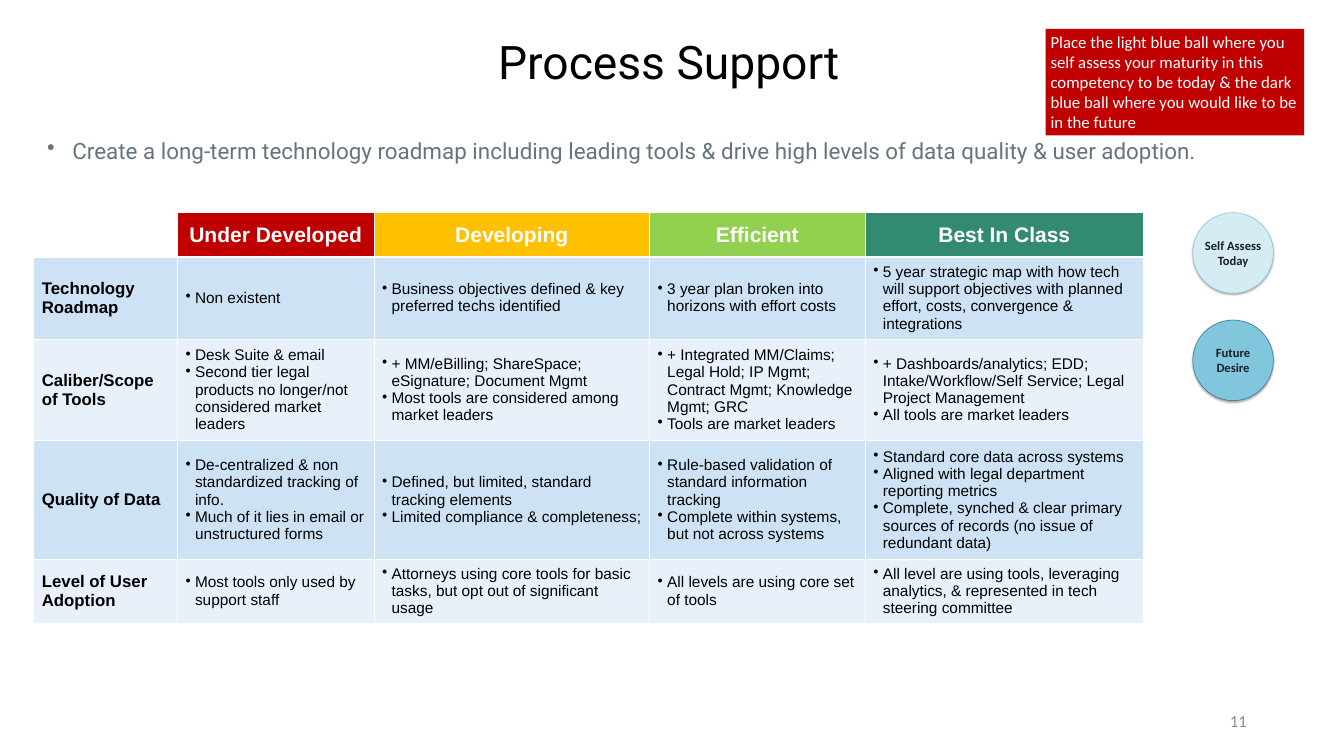
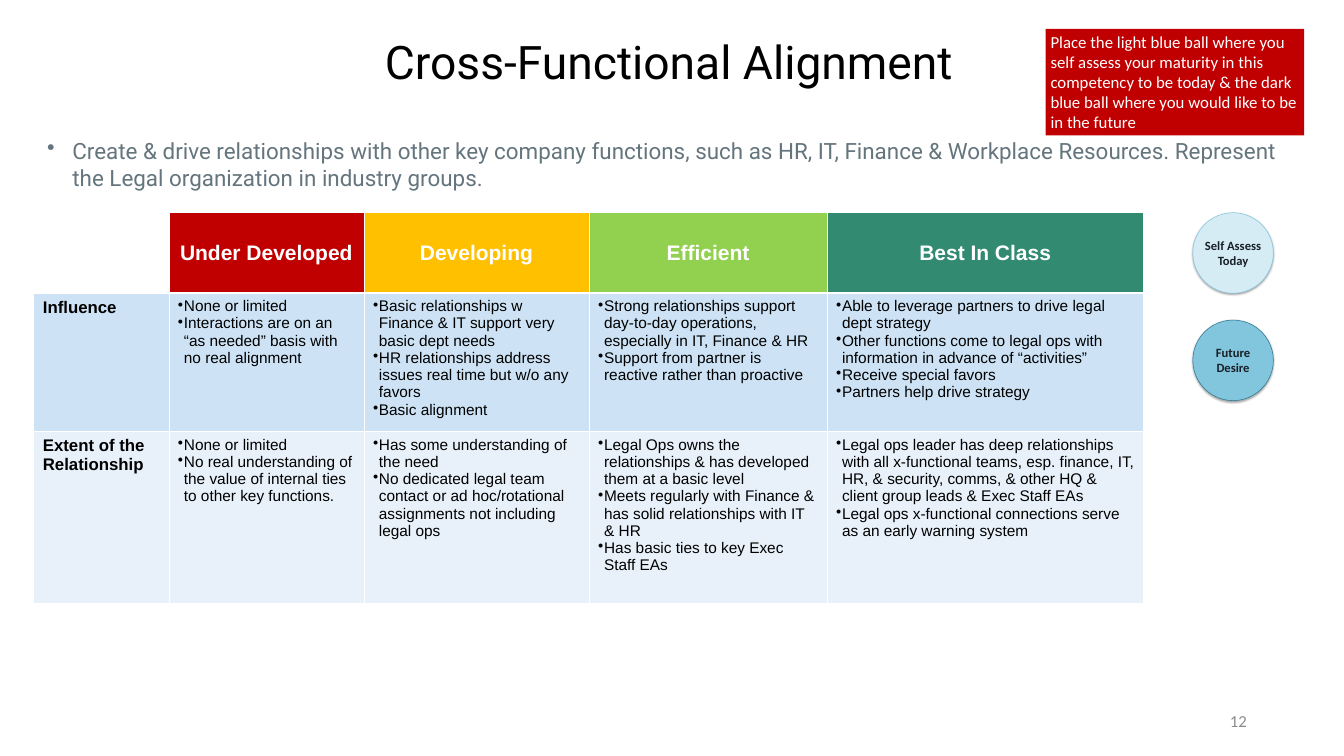
from collections import namedtuple

from lxml import etree
from pptx import Presentation
from pptx import util as u
from pptx.dml.color import RGBColor
from pptx.enum import shapes, text
from pptx.oxml.ns import qn

Cm, Pt = u.Cm, u.Pt
Box = namedtuple("Box", "left top width height")
Grid = namedtuple("Grid", "columns rows inset indent anchor")

COLOURS = {
    "white": "FFFFFF", "black": "000000", "number": "8C8C8C", "lead": "65757D",
    "red": "C00000", "amber": "FFC000", "lime": "92D050", "green": "328B71",
    "band_dark": "CDE3F5", "band_light": "E8F1FA", "ball_text": "181F26",
    "light_ball": "D5ECF4", "dark_ball": "82C6DE", "dark_ball_line": "277692",
}
ALIGN, ANCHOR = text.PP_ALIGN, text.MSO_ANCHOR

NUMBER_BOX = Box(47.85, 35.31, 15.24, 2.03)
TITLE_BOX = Box(1.7, 1.88, 64.03, 2.36)
HINT_BOX = Box(52.7, 1.45, 13.03, 5.38)
LEAD_BOX = Box(2.13, 6.78, 63.6, 1.63)
BALLS_BOX = Box(60.12, 10.72, 4.06, 9.47)
TABLE_BOX = Box(1.7, 10.72, 55.93, 20.67)

HINT = ("Place the light blue ball where you self assess your maturity in this "
        "competency to be today & the dark blue ball where you would like to be "
        "in the future")
LEVELS = [("Under Developed", "red"), ("Developing", "amber"),
          ("Efficient", "lime"), ("Best In Class", "green")]
BALLS = [("Self Assess Today", "light_ball", "dark_ball"),
         ("Future Desire", "dark_ball", "dark_ball_line")]

PROCESS_GRID = Grid([7.24, 9.91, 13.89, 10.87, 14.02], [2.22, 4.16, 5.09, 6, 3.2],
                    (0.41, 0.2), 0.48, ANCHOR.MIDDLE)
PROCESS_ROWS = [
    ("Technology Roadmap", [
        ["Non existent"],
        ["Business objectives defined & key preferred techs identified"],
        ["3 year plan broken into horizons with effort costs"],
        ["5 year strategic map with how tech will support objectives with planned "
         "effort, costs, convergence & integrations"]]),
    ("Caliber/Scope of Tools", [
        ["Desk Suite & email",
         "Second tier legal products no longer/not considered market leaders"],
        ["+ MM/eBilling; ShareSpace; eSignature; Document Mgmt",
         "Most tools are considered among market leaders"],
        ["+ Integrated MM/Claims; Legal Hold; IP Mgmt; Contract Mgmt; Knowledge "
         "Mgmt; GRC",
         "Tools are market leaders"],
        ["+ Dashboards/analytics; EDD; Intake/Workflow/Self Service; Legal Project "
         "Management",
         "All tools are market leaders"]]),
    ("Quality of Data", [
        ["De-centralized & non standardized tracking of info.",
         "Much of it lies in email or unstructured forms"],
        ["Defined, but limited, standard tracking elements",
         "Limited compliance & completeness;"],
        ["Rule-based validation of standard information tracking",
         "Complete within systems, but not across systems"],
        ["Standard core data across systems",
         "Aligned with legal department reporting metrics",
         "Complete, synched & clear primary sources of records (no issue of "
         "redundant data)"]]),
    ("Level of User Adoption", [
        ["Most tools only used by support staff"],
        ["Attorneys using core tools for basic tasks, but opt out of significant usage"],
        ["All levels are using core set of tools"],
        ["All level are using tools, leveraging analytics, & represented in tech "
         "steering committee"]]),
]

ALIGNMENT_GRID = Grid([6.81, 9.83, 11.35, 11.99, 15.95], [4.06, 6.95, 8.66],
                      (0.46, 0.23), 0.3, ANCHOR.TOP)
ALIGNMENT_ROWS = [
    ("Influence", [
        ["None or limited",
         "Interactions are on an “as needed” basis with no real alignment"],
        ["Basic relationships w Finance & IT support very basic dept needs",
         "HR relationships address issues real time but w/o any favors",
         "Basic alignment"],
        ["Strong relationships support day-to-day operations, especially in IT, "
         "Finance & HR",
         "Support from partner is reactive rather than proactive"],
        ["Able to leverage partners to drive legal dept strategy",
         "Other functions come to legal ops with information in advance of “activities”",
         "Receive special favors",
         "Partners help drive strategy"]]),
    ("Extent of the Relationship", [
        ["None or limited",
         "No real understanding of the value of internal ties to other key functions."],
        ["Has some understanding of the need",
         "No dedicated legal team contact or ad hoc/rotational assignments not "
         "including legal ops"],
        ["Legal Ops owns the relationships & has developed them at a basic level",
         "Meets regularly with Finance & has solid relationships with IT & HR",
         "Has basic ties to key Exec Staff EAs"],
        ["Legal ops leader has deep relationships with all x-functional teams, esp. "
         "finance, IT, HR, & security, comms, & other HQ & client group leads & "
         "Exec Staff EAs",
         "Legal ops x-functional connections serve as an early warning system"]]),
]


def colour(name):
    return RGBColor.from_string(COLOURS[name])


def lengths(box):
    return [Cm(value) for value in box]


def set_fill(target, name):
    target.fill.solid()
    target.fill.fore_color.rgb = colour(name)


def set_insets(target, across, down):
    """Set the margins of a text frame or a table cell."""
    target.margin_left = target.margin_right = Cm(across)
    target.margin_top = target.margin_bottom = Cm(down)


def write(frame, lines, font, size, ink, bold=False, align=ALIGN.LEFT, indent=0):
    """Write one paragraph per line, with hanging bullets if an indent is given."""
    for index, line in enumerate(lines):
        para = frame.paragraphs[0] if index == 0 else frame.add_paragraph()
        para.alignment = align
        if indent:
            properties = para._p.get_or_add_pPr()
            properties.set("marL", str(Cm(indent)))
            properties.set("indent", str(-Cm(indent)))
            etree.SubElement(properties, qn("a:buChar"), char="•")
        span = para.add_run()
        span.text = line
        span.font.name = font
        span.font.size = Pt(size)
        span.font.bold = bold
        span.font.color.rgb = colour(ink)


def add_text(page, box, line, font, size, ink, anchor=ANCHOR.TOP,
             insets=(0.25, 0.13), **style):
    frame = page.shapes.add_textbox(*lengths(box)).text_frame
    frame.word_wrap = True
    frame.vertical_anchor = anchor
    set_insets(frame, *insets)
    write(frame, [line], font, size, ink, **style)


def add_filled_shape(page, kind, box, fill):
    shape = page.shapes.add_shape(kind, *lengths(box))
    shape.shadow.inherit = False
    set_fill(shape, fill)
    shape.line.fill.background()
    shape.text_frame.word_wrap = True
    return shape


def add_hint(page, box):
    shape = add_filled_shape(page, shapes.MSO_SHAPE.RECTANGLE, box, "red")
    shape.text_frame.vertical_anchor = ANCHOR.TOP
    write(shape.text_frame, [HINT], "Calibri", 24, "white")


def add_soft_shadow(shape):
    effects = shape._element.spPr.find(qn("a:effectLst"))
    shadow = etree.SubElement(effects, qn("a:outerShdw"), blurRad=str(Pt(3.1)),
                              dist=str(Pt(1.8)), dir="5400000", rotWithShape="0")
    tint = etree.SubElement(shadow, qn("a:srgbClr"), val=COLOURS["black"])
    etree.SubElement(tint, qn("a:alpha"), val="35000")


def add_balls(page, box):
    """Place balls as wide as the box, the last one ending at its foot."""
    step = (box.height - box.width) / (len(BALLS) - 1)
    for index, (label, fill, line) in enumerate(BALLS):
        place = Box(box.left, box.top + index * step, box.width, box.width)
        ball = add_filled_shape(page, shapes.MSO_SHAPE.OVAL, place, fill)
        ball.line.color.rgb = colour(line)
        ball.line.width = Pt(0.75)
        add_soft_shadow(ball)
        ball.text_frame.vertical_anchor = ANCHOR.MIDDLE
        set_insets(ball.text_frame, 0, 0)
        write(ball.text_frame, [label], "Calibri", 18, "ball_text", True, ALIGN.CENTER)


def set_borders(cell, **widths):
    """Draw white borders of 1 point, or of the width given for a side."""
    properties = cell._tc.get_or_add_tcPr()
    for index, side in enumerate("LRTB"):
        line = etree.Element(qn("a:ln" + side), w=str(Pt(widths.get(side, 1))))
        fill = etree.SubElement(line, qn("a:solidFill"))
        etree.SubElement(fill, qn("a:srgbClr"), val=COLOURS["white"])
        properties.insert(index, line)


def style_cell(cell, fill, anchor, grid, **widths):
    set_fill(cell, fill)
    set_borders(cell, **widths)
    set_insets(cell, *grid.inset)
    cell.vertical_anchor = anchor


def add_maturity_table(page, box, grid, rows):
    table = page.shapes.add_table(len(grid.rows), len(grid.columns), *lengths(box)).table
    table.first_row = table.horz_banding = False
    for column, width in zip(table.columns, grid.columns):
        column.width = Cm(width)
    for row, height in zip(table.rows, grid.rows):
        row.height = Cm(height)

    style_cell(table.cell(0, 0), "white", ANCHOR.MIDDLE, grid, B=3)
    for across, (level, fill) in enumerate(LEVELS, 1):
        cell = table.cell(0, across)
        style_cell(cell, fill, ANCHOR.MIDDLE, grid, B=3)
        write(cell.text_frame, [level], "Arial", 30, "white", True, ALIGN.CENTER)

    for down, (topic, answers) in enumerate(rows, 1):
        band = "band_dark" if down % 2 else "band_light"
        for across, lines in enumerate([[topic]] + answers):
            cell = table.cell(down, across)
            style_cell(cell, band, grid.anchor, grid, T=3 if down == 1 else 1)
            if across == 0:
                write(cell.text_frame, lines, "Arial", 24, "black", bold=True)
            else:
                write(cell.text_frame, lines, "Arial", 22, "black", indent=grid.indent)


def add_competency(deck, number, title, lead, grid, rows):
    page = deck.slides.add_slide(deck.slide_layouts[6])
    add_text(page, NUMBER_BOX, str(number), "Calibri", 24, "number",
             ANCHOR.MIDDLE, align=ALIGN.RIGHT)
    add_text(page, TITLE_BOX, title, "Roboto", 66, "black", ANCHOR.MIDDLE,
             (0.69, 0.33), align=ALIGN.CENTER)
    add_hint(page, HINT_BOX)
    add_text(page, LEAD_BOX, lead, "Roboto", 32, "lead", indent=1.27)
    add_balls(page, BALLS_BOX)
    add_maturity_table(page, TABLE_BOX, grid, rows)


def main():
    deck = Presentation()
    deck.slide_width, deck.slide_height = Cm(67.74), Cm(38.1)
    add_competency(
        deck, 11, "Process Support",
        "Create a long-term technology roadmap including leading tools & drive high "
        "levels of data quality & user adoption.",
        PROCESS_GRID, PROCESS_ROWS)
    add_competency(
        deck, 12, "Cross-Functional Alignment",
        "Create & drive relationships with other key company functions, such as HR, "
        "IT, Finance & Workplace Resources. Represent the Legal organization in "
        "industry groups.",
        ALIGNMENT_GRID, ALIGNMENT_ROWS)
    deck.save("out.pptx")


if __name__ == "__main__":
    main()
